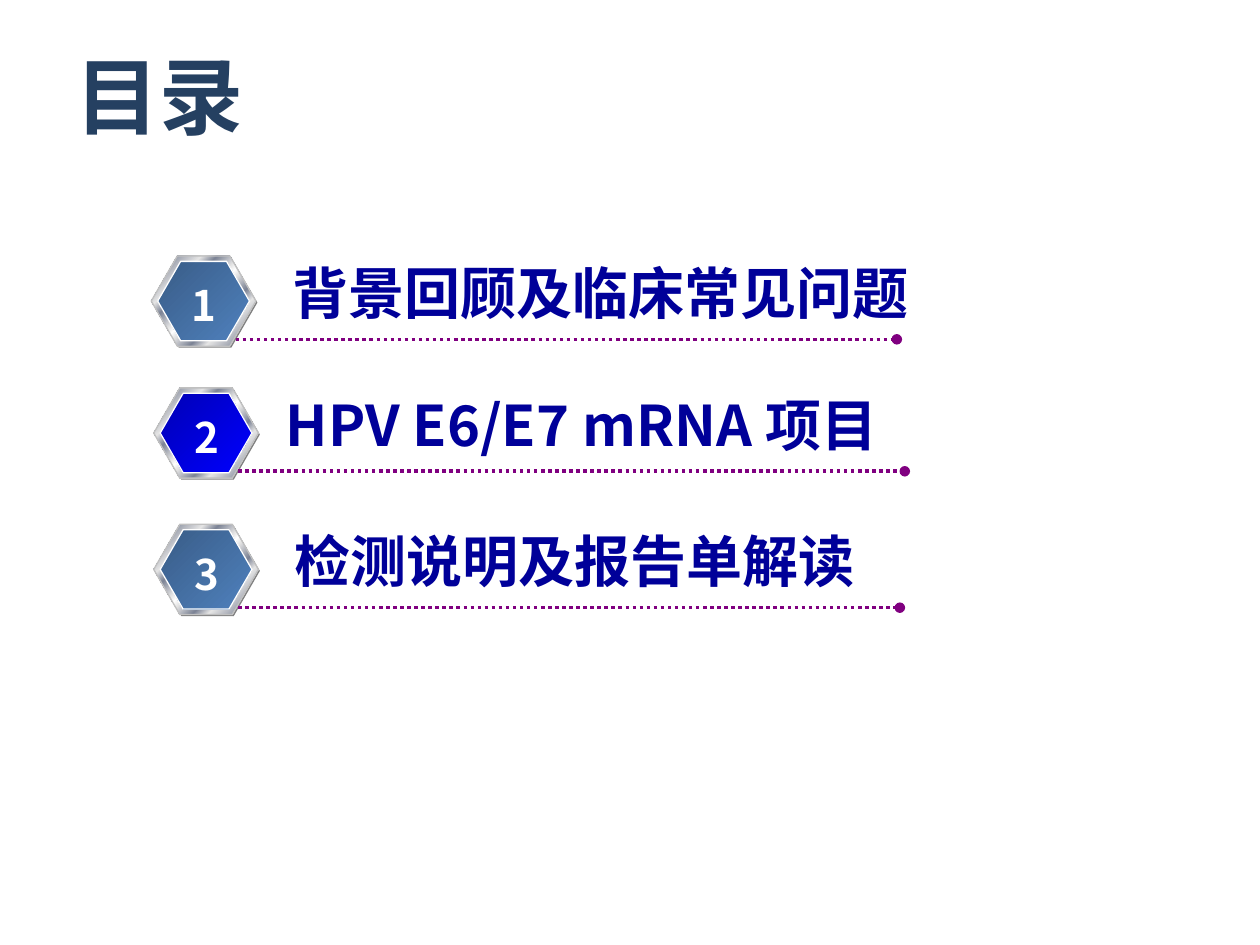
from lxml.etree import SubElement
from pptx import Presentation
from pptx.dml.color import RGBColor
from pptx.enum.dml import MSO_LINE
from pptx.enum.shapes import MSO_CONNECTOR, MSO_SHAPE
from pptx.enum.text import MSO_ANCHOR, PP_ALIGN
from pptx.oxml import parse_xml
from pptx.oxml.ns import nsdecls, qn
from pptx.util import Cm, Pt

FONT = "Noto Sans CJK SC"
TITLE_COLOR = RGBColor(0x25, 0x40, 0x61)
TEXT_COLOR = RGBColor(0x00, 0x00, 0x99)
WHITE = RGBColor(0xFF, 0xFF, 0xFF)
SHADE = RGBColor(0x80, 0x80, 0x80)
SILVER = RGBColor(0xC0, 0xC0, 0xC0)
PURPLE = RGBColor(0x80, 0x00, 0x80)

LIGHT_STEEL = RGBColor(0xE6, 0xE6, 0xE6)
DARK_STEEL = RGBColor(0x7D, 0x84, 0x96)
METAL = [(0, LIGHT_STEEL), (8, DARK_STEEL), (26, LIGHT_STEEL), (34, DARK_STEEL),
         (46, LIGHT_STEEL), (50, WHITE), (54, LIGHT_STEEL), (66, DARK_STEEL),
         (74, LIGHT_STEEL), (93, DARK_STEEL), (100, LIGHT_STEEL)]
STEEL_BLUE = [(0, RGBColor(0x39, 0x5C, 0x87)), (100, RGBColor(0x4F, 0x81, 0xBD))]
BRIGHT_BLUE = [(0, RGBColor(0x00, 0x00, 0xB6)), (100, RGBColor(0x00, 0x00, 0xFF))]

# Wording, badge gradient, badge left and top, text left, line end (cm)
ENTRIES = [
    ("背景回顾及临床常见问题", STEEL_BLUE, 3.05, 5.16, 5.64, 18.08),
    ("HPV E6/E7 mRNA 项目", BRIGHT_BLUE, 3.1, 7.82, 5.51, 18.24),
    ("检测说明及报告单解读", STEEL_BLUE, 3.1, 10.57, 5.69, 18.14),
]


class ContentsSlide:
    def __init__(self, presentation):
        self.slide = presentation.slides.add_slide(presentation.slide_layouts[5])

    def style(self, paragraph, size, color):
        font = paragraph.font
        font.name, font.size, font.bold = FONT, Pt(size), True
        font.color.rgb = color
        SubElement(font._element, qn("a:ea"), typeface=FONT)

    def title(self, text, left, top, width, height):
        shape = self.slide.shapes.title
        shape.left, shape.top, shape.width, shape.height = map(Cm, (left, top, width, height))
        frame = shape.text_frame
        frame.text = text
        frame.vertical_anchor = MSO_ANCHOR.MIDDLE
        frame.paragraphs[0].alignment = PP_ALIGN.LEFT
        self.style(frame.paragraphs[0], 48, TITLE_COLOR)

    def hexagon(self, group, left, top, width, height, fill, line=None):
        shape = group.shapes.add_shape(MSO_SHAPE.HEXAGON, *map(Cm, (left, top, width, height)))
        shape.shadow.inherit = False
        shape.adjustments[0] = 0.289
        if isinstance(fill, list):
            self.gradient(shape, fill)
        else:
            shape.fill.solid()
            shape.fill.fore_color.rgb = fill
        if line is None:
            shape.line.fill.background()
        else:
            shape.line.color.rgb = line
            shape.line.width = Pt(0.75)

    def gradient(self, shape, stops):
        marks = "".join(f'<a:gs pos="{position * 1000}"><a:srgbClr val="{color}"/></a:gs>'
                        for position, color in stops)
        fill = parse_xml(f'<a:gradFill {nsdecls("a")} rotWithShape="1"><a:gsLst>{marks}</a:gsLst>'
                         '<a:lin ang="2700000" scaled="0"/></a:gradFill>')
        shape._element.spPr.find(qn("a:prstGeom")).addnext(fill)

    def dotted_line(self, group, left, right, y):
        connector = group.shapes.add_connector(
            MSO_CONNECTOR.STRAIGHT, Cm(left), Cm(y), Cm(right), Cm(y))
        connector.line.color.rgb = PURPLE
        connector.line.width = Pt(2)
        connector.line.dash_style = MSO_LINE.ROUND_DOT
        SubElement(connector.line._get_or_add_ln(), qn("a:tailEnd"), type="oval")
        SubElement(connector._element.spPr, qn("a:effectLst"))

    def text(self, group, text, left, top, width, height, size, color, align=PP_ALIGN.LEFT):
        box = group.shapes.add_textbox(*map(Cm, (left, top, width, height)))
        frame = box.text_frame
        frame.word_wrap = False
        frame.text = text
        paragraph = frame.paragraphs[0]
        paragraph.alignment = align
        paragraph.line_spacing = 1.45
        self.style(paragraph, size, color)

    def entry(self, number, text, gradient, left, top, text_left, line_end):
        group = self.slide.shapes.add_group_shape()
        # Badge: shade, metal rim, coloured face
        self.hexagon(group, left + 0.03, top + 0.03, 2.11, 1.82, SHADE)
        self.hexagon(group, left, top, 2.11, 1.82, METAL, SILVER)
        self.hexagon(group, left + 0.13, top + 0.11, 1.85, 1.6, gradient, WHITE)
        # Underline and wording
        self.dotted_line(group, left + 1.7, line_end, top + 1.68)
        self.text(group, text, text_left, top - 0.68, 13.06, 2.24, 32, TEXT_COLOR)
        self.text(group, str(number), left + 0.55, top - 0.1, 1.04, 1.75, 24, WHITE,
                  PP_ALIGN.CENTER)


def main():
    presentation = Presentation()
    presentation.slide_width, presentation.slide_height = Cm(25.4), Cm(19.05)
    contents = ContentsSlide(presentation)
    contents.title("目录", 1.27, 0.99, 22.86, 1.85)
    for number, entry in enumerate(ENTRIES, 1):
        contents.entry(number, *entry)
    presentation.save("out.pptx")


if __name__ == "__main__":
    main()
